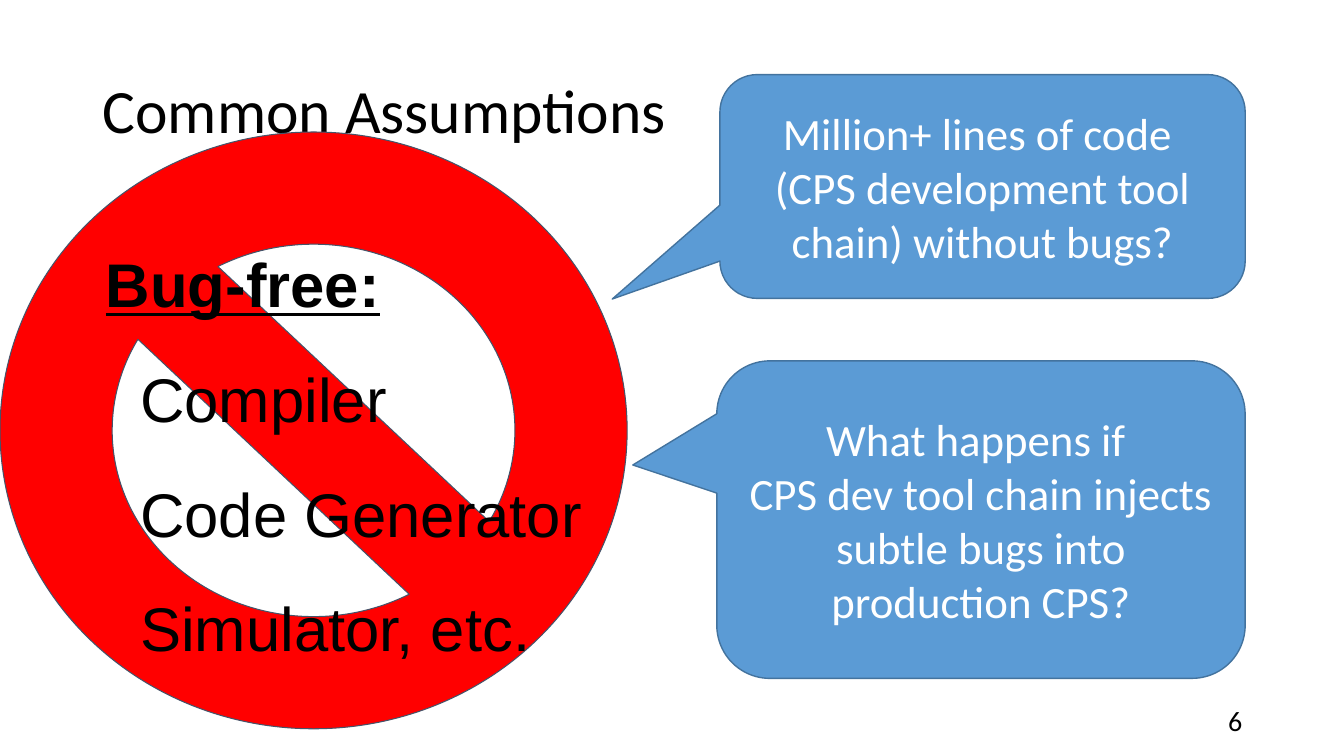
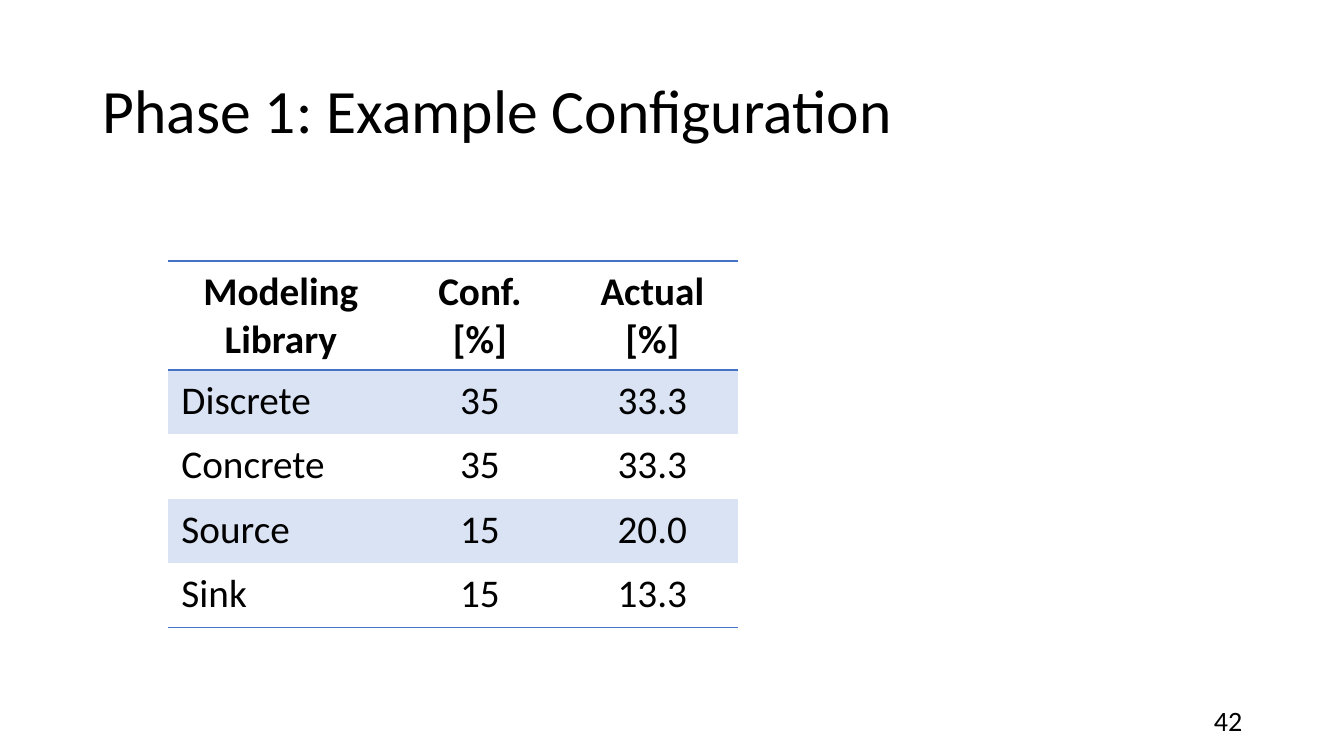
"""Build two slides on tool chain assumptions and an example configuration."""
from dataclasses import dataclass

from lxml import etree
from pptx import Presentation
from pptx.dml.color import RGBColor
from pptx.enum.shapes import MSO_SHAPE
from pptx.enum.text import MSO_ANCHOR, PP_ALIGN
from pptx.oxml.ns import qn
from pptx.util import Inches, Pt

LEFT, CENTER, RIGHT = PP_ALIGN.LEFT, PP_ALIGN.CENTER, PP_ALIGN.RIGHT
TOP, MIDDLE = MSO_ANCHOR.TOP, MSO_ANCHOR.MIDDLE
BAN, CALLOUT = MSO_SHAPE.NO_SYMBOL, MSO_SHAPE.ROUNDED_RECTANGULAR_CALLOUT
PLAIN = "{2D5ABB26-0587-4C30-8999-92F81FD0307C}"


@dataclass(frozen=True)
class Theme:
    font: str = "Calibri"
    list_font: str = "Arial"
    ink: str = "000000"
    white: str = "FFFFFF"
    blue: str = "5B9BD5"
    edge: str = "43739E"
    red: str = "FF0000"
    slate: str = "44546A"
    rule: str = "4472C4"
    band: str = "DAE3F3"
    title: int = 44
    note: int = 32
    cell: int = 28
    number: int = 20


class Deck:
    def __init__(self, theme):
        self.theme = theme
        self.prs = Presentation()
        self.prs.slide_width = Inches(13.33)
        self.prs.slide_height = Inches(7.5)
        self.slide = None

    def page(self, title, number):
        self.slide = self.prs.slides.add_slide(self.prs.slide_layouts[6])
        head = self.text((0.92, 0.4, 11.5, 1.45), title, self.theme.title)
        head.paragraphs[0].line_spacing = 0.9
        self.text((9.42, 6.95, 3, 0.4), number, self.theme.number, RIGHT)

    def style(self, frame, size, align=LEFT, color=None, font=None):
        for para in frame.paragraphs:
            para.alignment = align
            for run in para.runs:
                run.font.name = font or self.theme.font
                run.font.size = Pt(size)
                run.font.color.rgb = RGBColor.from_string(color or self.theme.ink)

    def text(self, box, words, size, align=LEFT, anchor=MIDDLE, font=None):
        frame = self.slide.shapes.add_textbox(*map(Inches, box)).text_frame
        frame.word_wrap = True
        frame.vertical_anchor = anchor
        frame.text = words
        self.style(frame, size, align, font=font)
        return frame

    def items(self, box, head, names):
        words = "\n".join([head, *names])
        frame = self.text(box, words, self.theme.title, LEFT, TOP, self.theme.list_font)
        frame.margin_left = frame.margin_right = Inches(0.13)
        frame.margin_top = frame.margin_bottom = Inches(0.13)
        for para in frame.paragraphs:
            para.line_spacing = 1.15
            para.space_after = Pt(21.3)
        for para in frame.paragraphs[1:]:
            para._p.get_or_add_pPr().set("marL", str(Inches(0.34)))
        font = frame.paragraphs[0].runs[0].font
        font.bold = font.underline = True

    def shape(self, kind, box, adjust, fill, line, width):
        shape = self.slide.shapes.add_shape(kind, *map(Inches, box))
        shape.shadow.inherit = False
        for i, value in enumerate(adjust):
            shape.adjustments[i] = value
        shape.fill.solid()
        shape.fill.fore_color.rgb = RGBColor.from_string(fill)
        shape.line.color.rgb = RGBColor.from_string(line)
        shape.line.width = Pt(width)
        return shape

    def callout(self, box, tip, words):
        theme = self.theme
        shape = self.shape(CALLOUT, box, (*tip, 0.167), theme.blue, theme.edge, 1)
        frame = shape.text_frame
        frame.word_wrap = True
        frame.vertical_anchor = MIDDLE
        frame.text = words
        self.style(frame, theme.note, CENTER, theme.white)

    def border(self, cell, *sides):
        props = cell._tc.get_or_add_tcPr()
        for i, side in enumerate(sides):
            line = etree.Element(qn(f"a:{side}"), w=str(Pt(1)))
            fill = etree.SubElement(line, qn("a:solidFill"))
            etree.SubElement(fill, qn("a:srgbClr"), val=self.theme.rule)
            props.insert(i, line)

    def table(self, spot, cols, rows, data):
        box = (*spot, sum(cols), sum(rows))
        grid = self.slide.shapes.add_table(len(rows), len(cols), *map(Inches, box)).table
        grid.first_row = grid.horz_banding = False
        grid._tbl.tblPr.find(qn("a:tableStyleId")).text = PLAIN
        for col, width in zip(grid.columns, cols):
            col.width = Inches(width)
        for r, (row, height) in enumerate(zip(data, rows)):
            grid.rows[r].height = Inches(height)
            for c, words in enumerate(row):
                self.cell(grid.cell(r, c), words, r, c, r == len(data) - 1)

    def cell(self, cell, words, row, col, last):
        cell.margin_left = cell.margin_right = Inches(0.13)
        cell.margin_top = cell.margin_bottom = Inches(0.07)
        cell.text = words
        align = LEFT if row and not col else CENTER
        self.style(cell.text_frame, self.theme.cell, align)
        for run in cell.text_frame.paragraphs[0].runs:
            run.font.bold = row == 0
        if row % 2:
            cell.fill.solid()
            cell.fill.fore_color.rgb = RGBColor.from_string(self.theme.band)
        else:
            cell.fill.background()
        if row == 0:
            self.border(cell, "lnT", "lnB")
        elif last:
            self.border(cell, "lnB")


def main():
    theme = Theme()
    deck = Deck(theme)

    deck.page("Common Assumptions", "6")
    deck.shape(BAN, (0, 1.31, 6.22, 5.92), [0.188], theme.red, theme.slate, 0.75)
    deck.items((0.92, 2.2, 5.67, 4.35), "Bug-free:",
               ["Compiler", "Code Generator", "Simulator, etc."])
    deck.callout((7.14, 0.74, 5.21, 2.22), (-0.705, 0.503),
                 "Million+ lines of code \v(CPS development tool chain) without bugs?")
    deck.callout((7.11, 3.58, 5.24, 3.15), (-0.659, -0.172),
                 "What happens if \vCPS dev tool chain injects subtle bugs into production CPS?")

    deck.page("Phase 1: Example Configuration", "42")
    deck.table((1.67, 2.59), [2.23, 1.72, 1.7], [1.08] + [0.64] * 4, [
        ("Modeling\vLibrary", "Conf.\v[%]", "Actual\v[%]"),
        ("Discrete", "35", "33.3"),
        ("Concrete", "35", "33.3"),
        ("Source", "15", "20.0"),
        ("Sink", "15", "13.3"),
    ])
    deck.prs.save("out.pptx")


if __name__ == "__main__":
    main()
